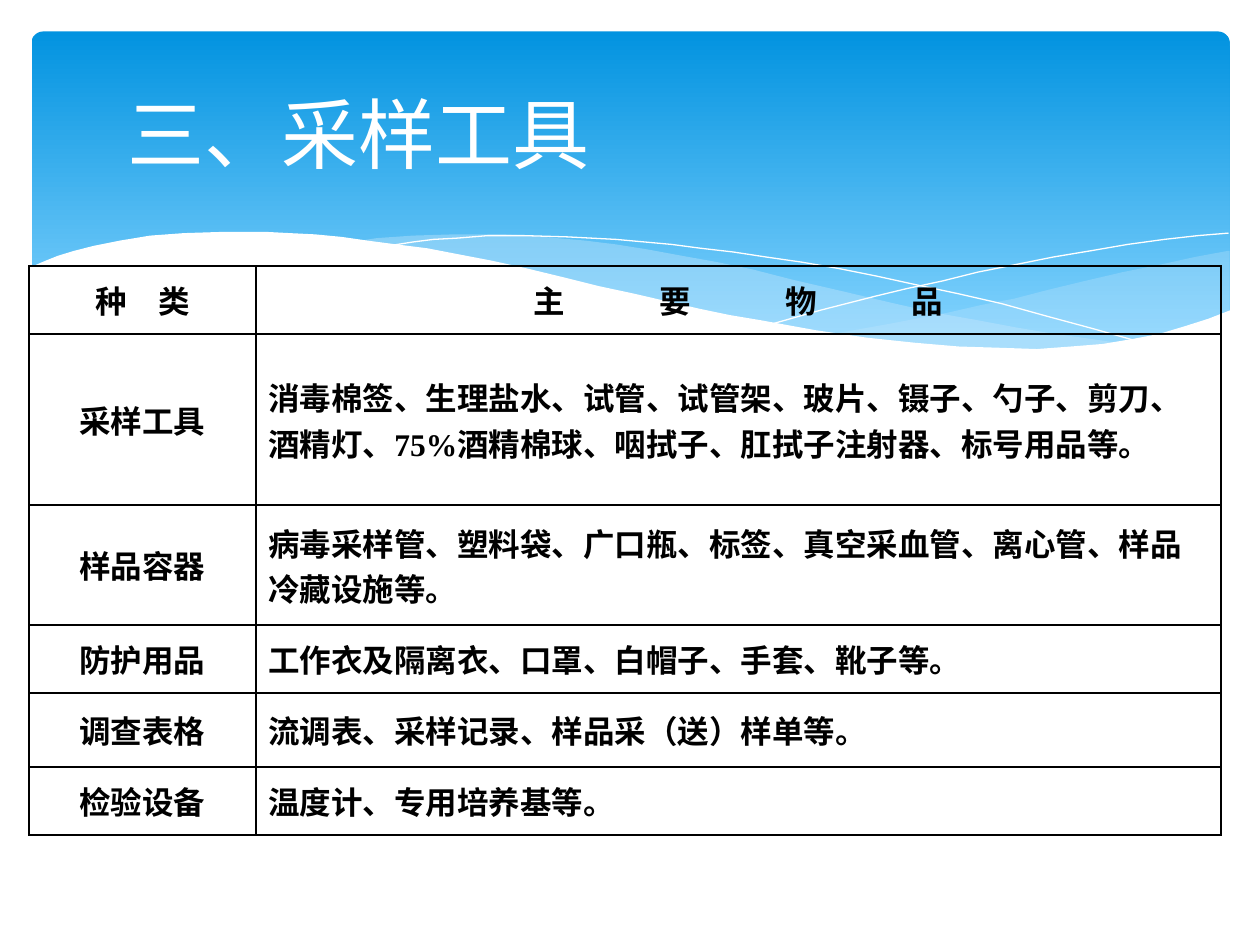
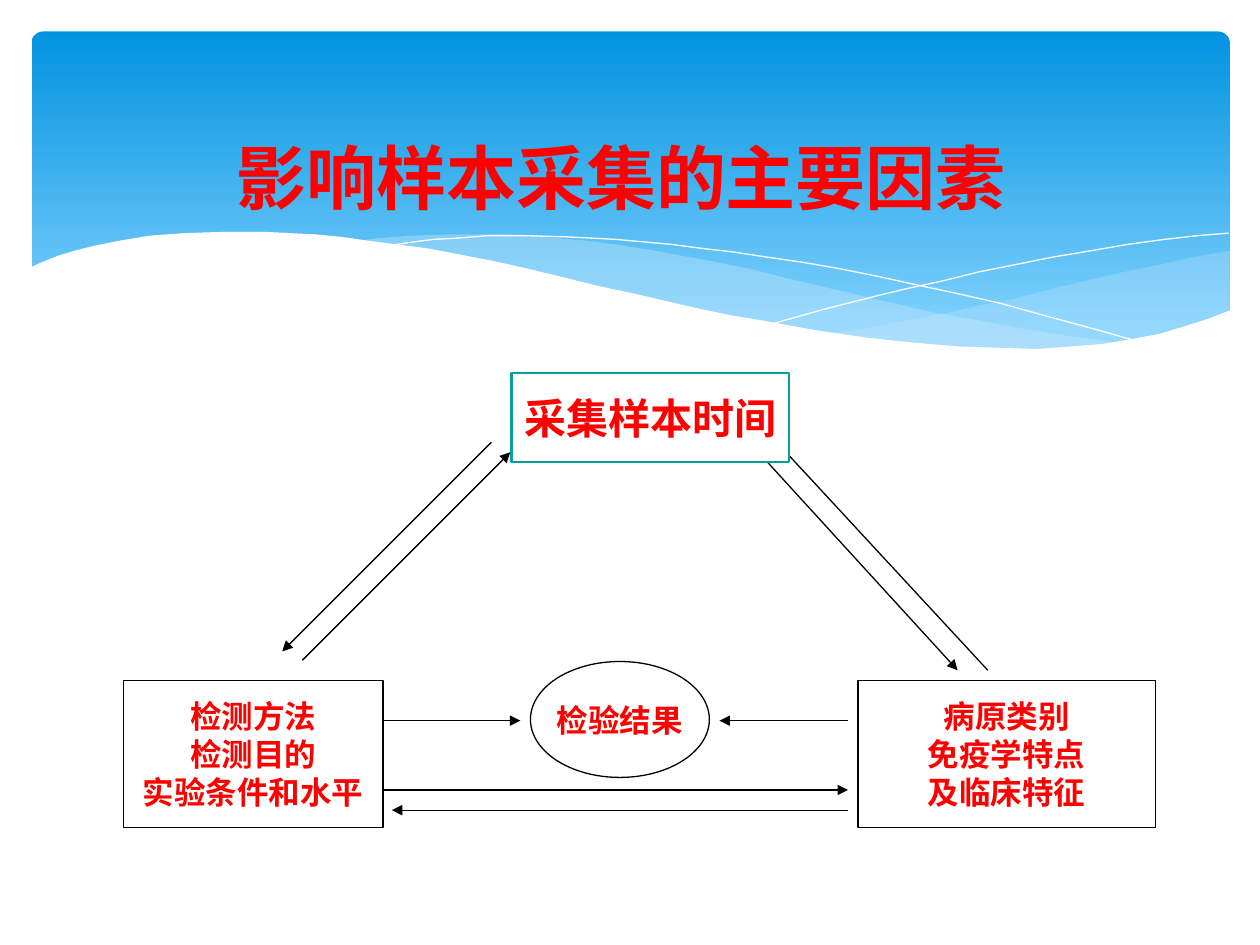
import dataclasses

import lxml.etree
import pptx
import pptx.dml.color
import pptx.enum.shapes
import pptx.enum.text
import pptx.oxml.ns
import pptx.util

Inches = pptx.util.Inches
Pt = pptx.util.Pt
MIDDLE = pptx.enum.text.MSO_ANCHOR.MIDDLE
TOP = pptx.enum.text.MSO_ANCHOR.TOP
LEFT = pptx.enum.text.PP_ALIGN.LEFT
CENTER = pptx.enum.text.PP_ALIGN.CENTER
RECTANGLE = pptx.enum.shapes.MSO_SHAPE.RECTANGLE
OVAL = pptx.enum.shapes.MSO_SHAPE.OVAL


@dataclasses.dataclass(frozen=True)
class Theme:
    """Colours, fonts and sizes shared by the slides."""
    white: str = "FFFFFF"
    black: str = "000000"
    red: str = "FF0000"
    teal: str = "049E9B"
    sky_top: str = "0293E0"
    sky_bottom: str = "83D3FE"
    mist: str = "C6E7FC"
    latin: str = "Calibri"
    serif: str = "Times New Roman"
    chinese: str = "Noto Sans CJK SC"
    title_size: int = 44
    red_title_size: int = 40
    key_size: int = 24
    body_size: int = 18
    thin: float = 0.75
    rule: float = 1
    accent: float = 1.25


@dataclasses.dataclass(frozen=True)
class Box:
    """A region in inches."""
    left: float
    top: float
    width: float
    height: float

    def inside(self, left, top, width, height):
        """Return a box placed relative to this one."""
        return Box(self.left + left, self.top + top, width, height)

    def lengths(self):
        """Return the four sides as slide lengths."""
        return [Inches(side) for side in dataclasses.astuple(self)]


THEME = Theme()
PAGE = Box(0, 0, 10, 7.5)

# Wave outlines are in hundredths of an inch from the page corner.
RIGHT_MIST = [
    (975, 199), (948, 204), (921, 210), (891, 216), (861, 223), (832, 230), (805, 237),
    (779, 242), (753, 248), (706, 257), (661, 265), (691, 269), (718, 272), (745, 275),
    (769, 277), (803, 278), (835, 277), (863, 275), (889, 272), (913, 267), (935, 261),
    (949, 257), (963, 252), (976, 247), (976, 199)]
CENTER_MIST = [
    (893, 273), (866, 269), (837, 265), (807, 260), (775, 254), (741, 248), (706, 240),
    (668, 231), (629, 222), (598, 214), (569, 208), (541, 203), (514, 198), (489, 194),
    (465, 191), (442, 189), (420, 187), (399, 186), (361, 186), (328, 187), (299, 189),
    (286, 191), (323, 196), (362, 203), (404, 211), (449, 222), (491, 232), (530, 240),
    (566, 248), (601, 255), (634, 261), (665, 266), (695, 270), (722, 274), (748, 276),
    (773, 277), (807, 278), (838, 278), (867, 276), (893, 273)]
FALLING_LINE = [
    (309, 195), (328, 192), (344, 190), (363, 189), (387, 187), (416, 187), (450, 188),
    (489, 190), (533, 194), (556, 197), (582, 200), (608, 204), (636, 208), (665, 213),
    (695, 219), (727, 226), (760, 233), (795, 241), (831, 251), (868, 261), (907, 272)]
RISING_LINE = [
    (613, 257), (652, 246), (695, 235), (720, 229), (748, 223), (776, 216), (806, 210),
    (836, 204), (866, 199), (895, 194), (924, 190), (951, 187), (975, 185)]
WHITE_WAVE = [
    (977, 246), (959, 253), (940, 259), (920, 265), (899, 269), (875, 273), (850, 275),
    (823, 277), (793, 276), (761, 275), (726, 272), (688, 268), (647, 262), (603, 254),
    (579, 250), (555, 245), (529, 239), (503, 233), (475, 227), (447, 220), (418, 213),
    (391, 207), (365, 202), (339, 197), (315, 194), (292, 191), (271, 188), (250, 186),
    (230, 185), (211, 184), (177, 184), (146, 185), (119, 187), (95, 191), (75, 195),
    (59, 199), (46, 203), (36, 207), (29, 210), (23, 213), (23, 329), (977, 329), (977, 246)]

SUPPLIES = [
    ("种类", "主要物品"),
    ("采样工具", "消毒棉签、生理盐水、试管、试管架、玻片、镊子、勺子、剪刀、酒精灯、75%酒精棉球、"
                 "咽拭子、肛拭子注射器、标号用品等。"),
    ("样品容器", "病毒采样管、塑料袋、广口瓶、标签、真空采血管、离心管、样品冷藏设施等。"),
    ("防护用品", "工作衣及隔离衣、口罩、白帽子、手套、靴子等。"),
    ("调查表格", "流调表、采样记录、样品采（送）样单等。"),
    ("检验设备", "温度计、专用培养基等。")]
HEADING_GAPS = (18, 54)
COLUMN_WIDTHS = (1.8, 7.66)
ROW_HEIGHTS = (0.54, 1.36, 0.95, 0.54, 0.59, 0.54)

ARROWS = [
    ((1.42, 2.28), (3.07, 0.63)), ((2.92, 0.55), (1.26, 2.21)),
    ((5.04, 0.63), (6.62, 2.36)), ((6.86, 2.36), (5.12, 0.48)),
    ((2.05, 3.31), (5.75, 3.31)), ((5.75, 3.47), (2.13, 3.47)),
    ((2.05, 2.76), (3.15, 2.76)), ((5.75, 2.76), (4.73, 2.76))]


def rgb(value):
    """Return a colour object for a hex value."""
    return pptx.dml.color.RGBColor.from_string(value)


def add_child(parent, tag, **attributes):
    """Append a drawing element to a parent."""
    return lxml.etree.SubElement(parent, pptx.oxml.ns.qn(tag), attributes)


def format_text(paragraphs, size, color, font, bold=False, align=CENTER):
    """Give every run in the paragraphs one style."""
    for paragraph in paragraphs:
        paragraph.alignment = align
        for run in paragraph.runs:
            run.font.size = Pt(size)
            run.font.bold = bold
            run.font.color.rgb = rgb(color)
            run.font.name = font
            add_child(run.font._element, "a:ea", typeface=THEME.chinese)


def draw_wave(slide, page, points, fill=None, opacity=100):
    """Draw a filled wave, or a white hairline when there is no fill."""
    builder = slide.shapes.build_freeform(*points[0], scale=Inches(0.01))
    builder.add_line_segments(points[1:], close=fill is not None)
    wave = builder.convert_to_shape(Inches(page.left), Inches(page.top))
    wave.shadow.inherit = False
    if fill is None:
        wave.fill.background()
        wave.line.color.rgb = rgb(THEME.white)
        wave.line.width = Pt(0)
        return
    wave.line.fill.background()
    wave.fill.solid()
    wave.fill.fore_color.rgb = rgb(fill)
    if opacity < 100:
        tint = wave._element.spPr.find(".//" + pptx.oxml.ns.qn("a:srgbClr"))
        add_child(tint, "a:alpha", val=str(opacity * 1000))


def draw_band(slide, page):
    """Draw the blue sky band and its waves."""
    sky = slide.shapes.add_shape(
        pptx.enum.shapes.MSO_SHAPE.ROUNDED_RECTANGLE,
        *page.inside(0.25, 0.25, 9.51, 2.7).lengths())
    sky.adjustments[0] = 0.034
    sky.shadow.inherit = False
    sky.line.fill.background()
    sky.fill.gradient()
    sky.fill.gradient_angle = 270
    stops = zip(sky.fill.gradient_stops, (0, 0.9), (THEME.sky_top, THEME.sky_bottom))
    for stop, position, color in stops:
        stop.position = position
        stop.color.rgb = rgb(color)
    draw_wave(slide, page, RIGHT_MIST, THEME.mist, 29)
    draw_wave(slide, page, CENTER_MIST, THEME.mist, 40)
    draw_wave(slide, page, FALLING_LINE)
    draw_wave(slide, page, RISING_LINE)
    draw_wave(slide, page, WHITE_WAVE, THEME.white)


def start_slide(deck, title, box, anchor, **style):
    """Add a slide with the band and a title in front of it."""
    slide = deck.slides.add_slide(deck.slide_layouts[5])
    draw_band(slide, PAGE)
    heading = slide.shapes.title
    slide.shapes._spTree.append(heading._element)
    heading.left, heading.top, heading.width, heading.height = box.lengths()
    frame = heading.text_frame
    frame.text = title
    frame.word_wrap = True
    frame.auto_size = pptx.enum.text.MSO_AUTO_SIZE.NONE
    frame.vertical_anchor = anchor
    format_text(frame.paragraphs, font=THEME.latin, **style)
    return slide


def spread_text(paragraph, gap):
    """Open equal gaps in points between the characters of a heading."""
    text = paragraph.text
    paragraph.text = text[:-1]
    paragraph.runs[0].font._element.set("spc", str(gap * 100))
    paragraph.add_run().text = text[-1]


def border_cell(cell):
    """Rule all four sides of a cell and leave it unfilled."""
    cell.fill.background()
    properties = cell._tc.get_or_add_tcPr()
    for position, side in enumerate(("a:lnL", "a:lnR", "a:lnT", "a:lnB")):
        edge = add_child(properties, side, w=str(Pt(THEME.rule)))
        add_child(add_child(edge, "a:solidFill"), "a:srgbClr", val=THEME.black)
        properties.insert(position, edge)


def draw_supplies(slide, box):
    """Draw the table of sampling supplies."""
    table = slide.shapes.add_table(
        len(SUPPLIES), len(COLUMN_WIDTHS), *box.lengths()).table
    table.first_row = table.horz_banding = False
    for column, width in zip(table.columns, COLUMN_WIDTHS):
        column.width = Inches(width)
    for row_index, (row, height) in enumerate(zip(table.rows, ROW_HEIGHTS)):
        row.height = Inches(height)
        for column_index, cell in enumerate(row.cells):
            is_heading = row_index == 0
            paragraph = cell.text_frame.paragraphs[0]
            paragraph.text = SUPPLIES[row_index][column_index]
            if is_heading:
                spread_text(paragraph, HEADING_GAPS[column_index])
            format_text(
                [paragraph], THEME.body_size, THEME.black,
                THEME.chinese if is_heading else THEME.serif, True,
                CENTER if is_heading or column_index == 0 else LEFT)
            cell.vertical_anchor = MIDDLE
            border_cell(cell)


def draw_factor(slide, box, text, outline=RECTANGLE, line=THEME.black,
                weight=THEME.thin, size=THEME.body_size, font=THEME.serif):
    """Draw one white factor node with red text."""
    factor = slide.shapes.add_shape(outline, *box.lengths())
    factor.shadow.inherit = False
    factor.fill.solid()
    factor.fill.fore_color.rgb = rgb(THEME.white)
    factor.line.color.rgb = rgb(line)
    factor.line.width = Pt(weight)
    frame = factor.text_frame
    frame.text = text
    frame.word_wrap = False
    frame.vertical_anchor = MIDDLE
    format_text(frame.paragraphs, size, THEME.red, font, True)


def draw_arrow(slide, box, start, end):
    """Draw a black arrow between two points of the box."""
    ends = [Inches(origin + offset) for point in (start, end)
            for origin, offset in zip((box.left, box.top), point)]
    arrow = slide.shapes.add_connector(pptx.enum.shapes.MSO_CONNECTOR.STRAIGHT, *ends)
    arrow.line.color.rgb = rgb(THEME.black)
    arrow.line.width = Pt(THEME.thin)
    add_child(arrow.line._get_or_add_ln(), "a:tailEnd", type="triangle")
    add_child(arrow._element.spPr, "a:effectLst")


def draw_factors(slide, box):
    """Draw the factors around the test result and the arrows between them."""
    draw_factor(slide, box.inside(0, 2.44, 2.06, 1.17), "检测方法\n检测目的\n实验条件和水平")
    draw_factor(slide, box.inside(3.23, 2.29, 1.42, 0.92), "检验结果", OVAL)
    draw_factor(slide, box.inside(5.83, 2.44, 2.36, 1.17), "病原类别\n免疫学特点\n及临床特征")
    for start, end in ARROWS:
        draw_arrow(slide, box, start, end)
    draw_factor(slide, box.inside(3.08, 0, 2.2, 0.71), "采集样本时间", line=THEME.teal,
                weight=THEME.accent, size=THEME.key_size, font=THEME.latin)


def build_tools_slide(deck):
    """Build the slide of sampling tools."""
    slide = start_slide(deck, "三、采样工具", Box(0.5, 0.37, 9, 1.37), MIDDLE,
                        size=THEME.title_size, color=THEME.white, align=LEFT)
    slide.shapes.title.text_frame.margin_left = Inches(0.51)
    draw_supplies(slide, Box(0.23, 2.11, sum(COLUMN_WIDTHS), sum(ROW_HEIGHTS)))


def build_factors_slide(deck):
    """Build the slide of factors that affect sampling."""
    slide = start_slide(deck, "影响样本采集的主要因素", Box(0.43, 1.07, 9, 1.37), TOP,
                        size=THEME.red_title_size, color=THEME.red, bold=True)
    slide.shapes.title.text_frame.margin_top = 0
    draw_factors(slide, Box(0.98, 2.96, 8.19, 3.61))


def main():
    """Build and save the deck."""
    deck = pptx.Presentation()
    deck.slide_width, deck.slide_height = Inches(PAGE.width), Inches(PAGE.height)
    build_tools_slide(deck)
    build_factors_slide(deck)
    deck.save("out.pptx")


if __name__ == "__main__":
    main()
